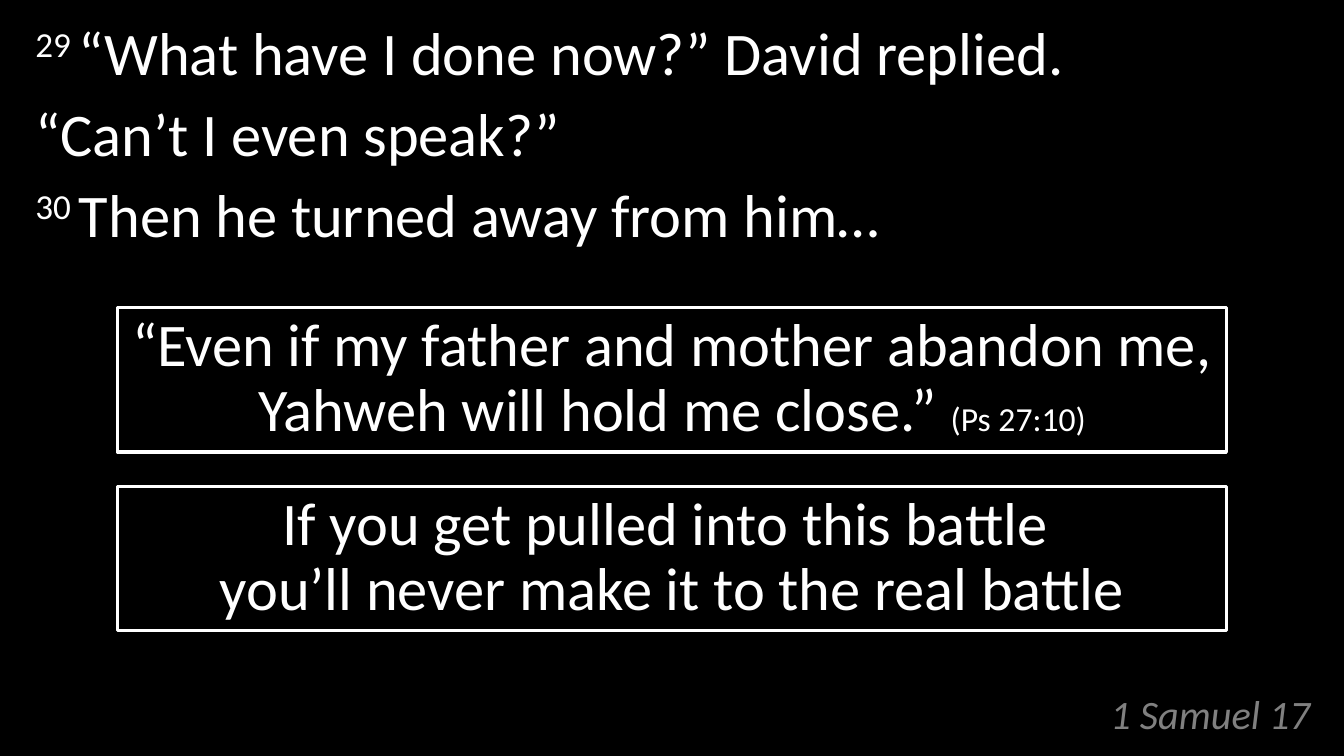
"""Build a scripture slide on 1 Samuel 17 with two framed quotes."""
from dataclasses import dataclass

from pptx import Presentation
from pptx.dml.color import RGBColor
from pptx.enum import shapes, text
from pptx.util import Pt


@dataclass(frozen=True)
class Theme:
    font: str = "Calibri"
    black: RGBColor = RGBColor(0, 0, 0)
    white: RGBColor = RGBColor(255, 255, 255)
    grey: RGBColor = RGBColor(128, 128, 128)
    verse: int = 36
    chapter: int = 24
    citation: int = 20


theme = Theme()


def add_text(p, words, size=theme.verse, color=theme.white, italic=False, raised=False):
    r = p.add_run()
    r.text = words
    r.font.name = theme.font
    r.font.size = Pt(size)
    r.font.color.rgb = color
    r.font.italic = italic
    if raised:
        r.font._element.set("baseline", "30000")


prs = Presentation()
prs.slide_width, prs.slide_height = Pt(800), Pt(450)
s = prs.slides.add_slide(prs.slide_layouts[5])
s.background.fill.solid()
s.background.fill.fore_color.rgb = theme.black

title = s.shapes.title
title.left, title.top, title.width, title.height = Pt(508), Pt(400), Pt(279), Pt(42.5)
tf = title.text_frame
tf.auto_size = text.MSO_AUTO_SIZE.NONE
tf.vertical_anchor = text.MSO_ANCHOR.BOTTOM
p = tf.paragraphs[0]
p.alignment = text.PP_ALIGN.RIGHT
p.line_spacing = 0.8
add_text(p, "1 Samuel 17", size=theme.chapter, color=theme.grey, italic=True)

verses = [
    ("29 ", "“What have I done now?” David replied."),
    ("", "“Can’t I even speak?”"),
    ("30 ", "Then he turned away from him…"),
]
passage = s.shapes.add_textbox(Pt(14), Pt(8.5), Pt(773), Pt(381))
tf = passage.text_frame
tf.word_wrap = True
for i, (number, words) in enumerate(verses):
    p = tf.add_paragraph() if i else tf.paragraphs[0]
    p.line_spacing = 0.95
    p.space_before = Pt(7.2)
    if number:
        add_text(p, number, raised=True)
    add_text(p, words)

quotes = [
    (["“Even if my father and mother abandon me, Yahweh will hold me close.” "], "(Ps 27:10)"),
    (["If you get pulled into this battle ", "you’ll never make it to the real battle"], ""),
]
for i, (lines, citation) in enumerate(quotes):
    sp = s.shapes.add_shape(shapes.MSO_SHAPE.ROUNDED_RECTANGLE,
                            Pt(70), Pt(183 + 106.5 * i), Pt(660), Pt(86))
    sp.adjustments[0] = 0
    sp.shadow.inherit = False
    sp.fill.solid()
    sp.fill.fore_color.rgb = theme.black
    sp.line.color.rgb = theme.white
    sp.line.width = Pt(2)
    tf = sp.text_frame
    tf.word_wrap = True
    tf.auto_size = text.MSO_AUTO_SIZE.SHAPE_TO_FIT_TEXT
    tf.vertical_anchor = text.MSO_ANCHOR.MIDDLE
    p = tf.paragraphs[0]
    p.alignment = text.PP_ALIGN.CENTER
    p.line_spacing = 0.9
    for n, line in enumerate(lines):
        if n:
            p.add_line_break()
        add_text(p, line)
    if citation:
        add_text(p, citation, size=theme.citation)

prs.save("out.pptx")
